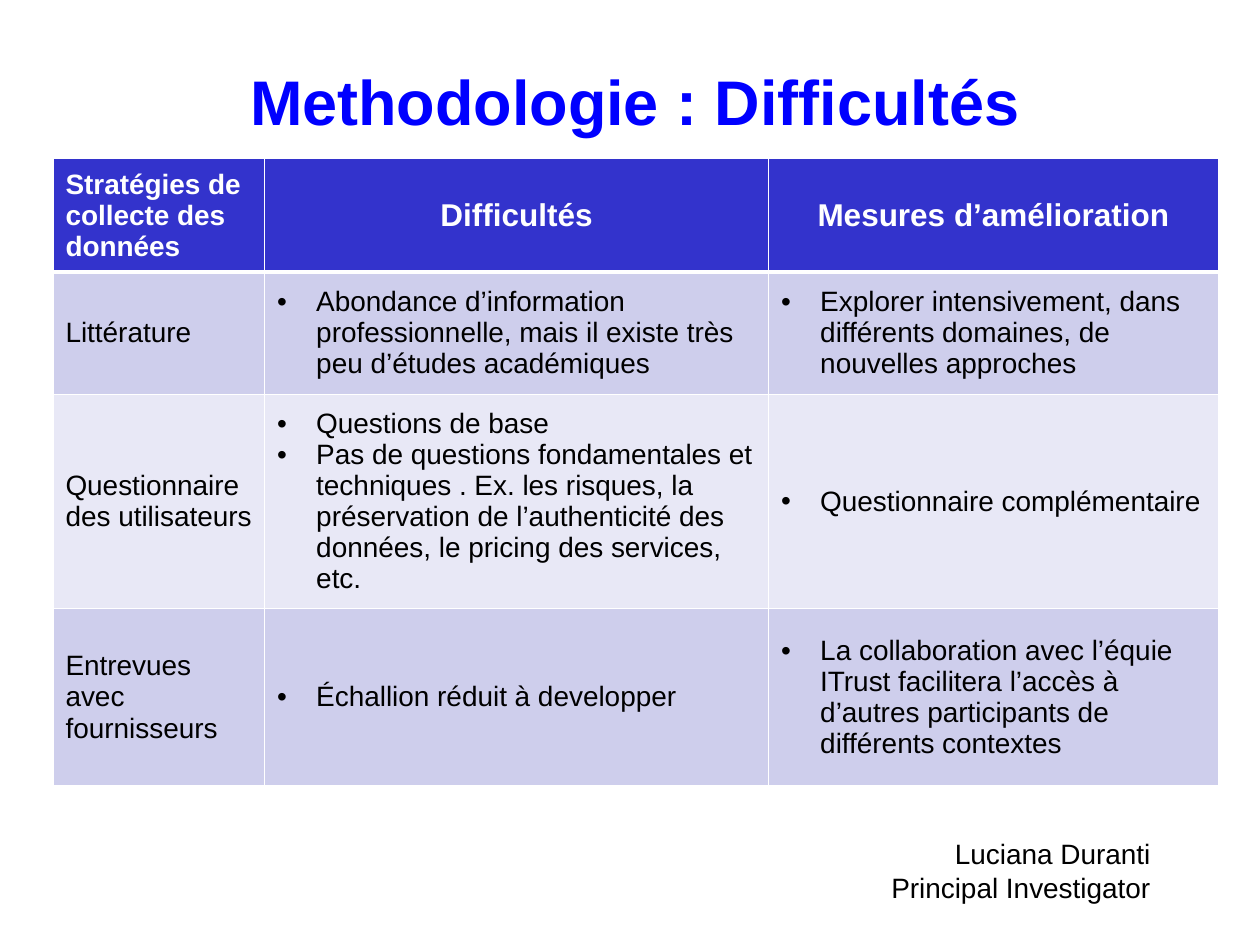
import dataclasses

import lxml.etree
import pptx
import pptx.dml.color
import pptx.enum.text
import pptx.oxml.ns
import pptx.util

Inches = pptx.util.Inches
Pt = pptx.util.Pt
ALIGN = pptx.enum.text.PP_ALIGN
MIDDLE = pptx.enum.text.MSO_ANCHOR.MIDDLE
qn = pptx.oxml.ns.qn


@dataclasses.dataclass(frozen=True)
class Theme:
    font: str = "Arial"
    title: str = "0000FF"
    text: str = "000000"
    white: str = "FFFFFF"
    header: str = "3333CC"
    bands: tuple = ("CECEEC", "E8E8F6")
    title_size: int = 36
    head_size: int = 18
    body_size: int = 16


THEME = Theme()

HEADERS = ["Stratégies de collecte des données", "Difficultés", "Mesures d’amélioration"]
ROWS = [
    ("Littérature",
     ["Abondance d’information professionnelle, mais il existe très peu d’études académiques"],
     ["Explorer intensivement, dans différents domaines, de nouvelles approches"]),
    ("Questionnaire des utilisateurs",
     ["Questions de base",
      "Pas de questions fondamentales et techniques . Ex. les risques, la préservation "
      "de l’authenticité des données, le pricing des services, etc."],
     ["Questionnaire complémentaire"]),
    ("Entrevues avec fournisseurs",
     ["Échallion réduit à developper"],
     ["La collaboration avec l’équie ITrust facilitera l’accès à d’autres participants "
      "de différents contextes"]),
]
COL_WIDTHS = [1.68, 4, 3.57]
ROW_HEIGHTS = [0.87, 0.97, 1.39, 1.41]


def rgb(color):
    return pptx.dml.color.RGBColor.from_string(color)


def write(p, text, size=THEME.body_size, color=THEME.text, bold=False,
          align=ALIGN.LEFT, bullet=False):
    p.text = text
    p.alignment = align
    if bullet:
        pPr = p._p.get_or_add_pPr()
        pPr.set("marL", str(Inches(0.31)))
        pPr.set("indent", str(-Inches(0.31)))
        lxml.etree.SubElement(pPr, qn("a:buFont"), typeface=THEME.font)
        lxml.etree.SubElement(pPr, qn("a:buChar"), char="•")
    for r in p.runs:
        r.font.name = THEME.font
        r.font.size = Pt(size)
        r.font.bold = bold
        r.font.color.rgb = rgb(color)


def style_cell(cell, fill, bottom=1, top=1):
    tcPr = cell._tc.get_or_add_tcPr()
    for side, width in (("L", 1), ("R", 1), ("T", top), ("B", bottom)):
        ln = lxml.etree.SubElement(tcPr, qn(f"a:ln{side}"), w=str(Pt(width)))
        solid = lxml.etree.SubElement(ln, qn("a:solidFill"))
        lxml.etree.SubElement(solid, qn("a:srgbClr"), val=THEME.white)
    cell.fill.solid()
    cell.fill.fore_color.rgb = rgb(fill)
    cell.vertical_anchor = MIDDLE


def add_title(s, box, text):
    sp = s.shapes.title
    sp.left, sp.top, sp.width, sp.height = map(Inches, box)
    tf = sp.text_frame
    tf.word_wrap = True
    tf.vertical_anchor = MIDDLE
    tf.margin_right = Inches(0.25)
    write(tf.paragraphs[0], text, size=THEME.title_size, color=THEME.title,
          bold=True, align=ALIGN.CENTER)


def add_difficulties_table(s, box):
    table = s.shapes.add_table(len(ROWS) + 1, len(HEADERS), *map(Inches, box)).table
    for column, width in zip(table.columns, COL_WIDTHS):
        column.width = Inches(width)
    for row, height in zip(table.rows, ROW_HEIGHTS):
        row.height = Inches(height)
    for j, text in enumerate(HEADERS):
        cell = table.cell(0, j)
        style_cell(cell, THEME.header, bottom=3)
        write(cell.text_frame.paragraphs[0], text, color=THEME.white, bold=True,
              size=THEME.head_size if j else THEME.body_size,
              align=ALIGN.CENTER if j else ALIGN.LEFT)
    for i, (strategy, *lists) in enumerate(ROWS, 1):
        for j, items in enumerate([[strategy], *lists]):
            cell = table.cell(i, j)
            style_cell(cell, THEME.bands[(i - 1) % 2], top=3 if i == 1 else 1)
            tf = cell.text_frame
            for n, item in enumerate(items):
                p = tf.add_paragraph() if n else tf.paragraphs[0]
                write(p, item, bullet=j > 0)


def add_signature(s, box, text):
    tf = s.shapes.add_textbox(*map(Inches, box)).text_frame
    tf.word_wrap = False
    write(tf.paragraphs[0], text, align=ALIGN.RIGHT)


def main():
    prs = pptx.Presentation()
    prs.slide_width, prs.slide_height = Inches(10), Inches(7.5)
    s = prs.slides.add_slide(prs.slide_layouts[5])
    s.background.fill.solid()
    s.background.fill.fore_color.rgb = rgb(THEME.white)
    add_signature(s, (6.97, 6.59, 2.26, 0.64), "Luciana Duranti\nPrincipal Investigator")
    add_title(s, (0.47, 0.17, 9.29, 1.25), "Methodologie : Difficultés")
    add_difficulties_table(s, (0.42, 1.26, sum(COL_WIDTHS), sum(ROW_HEIGHTS)))
    prs.save("out.pptx")


if __name__ == "__main__":
    main()
